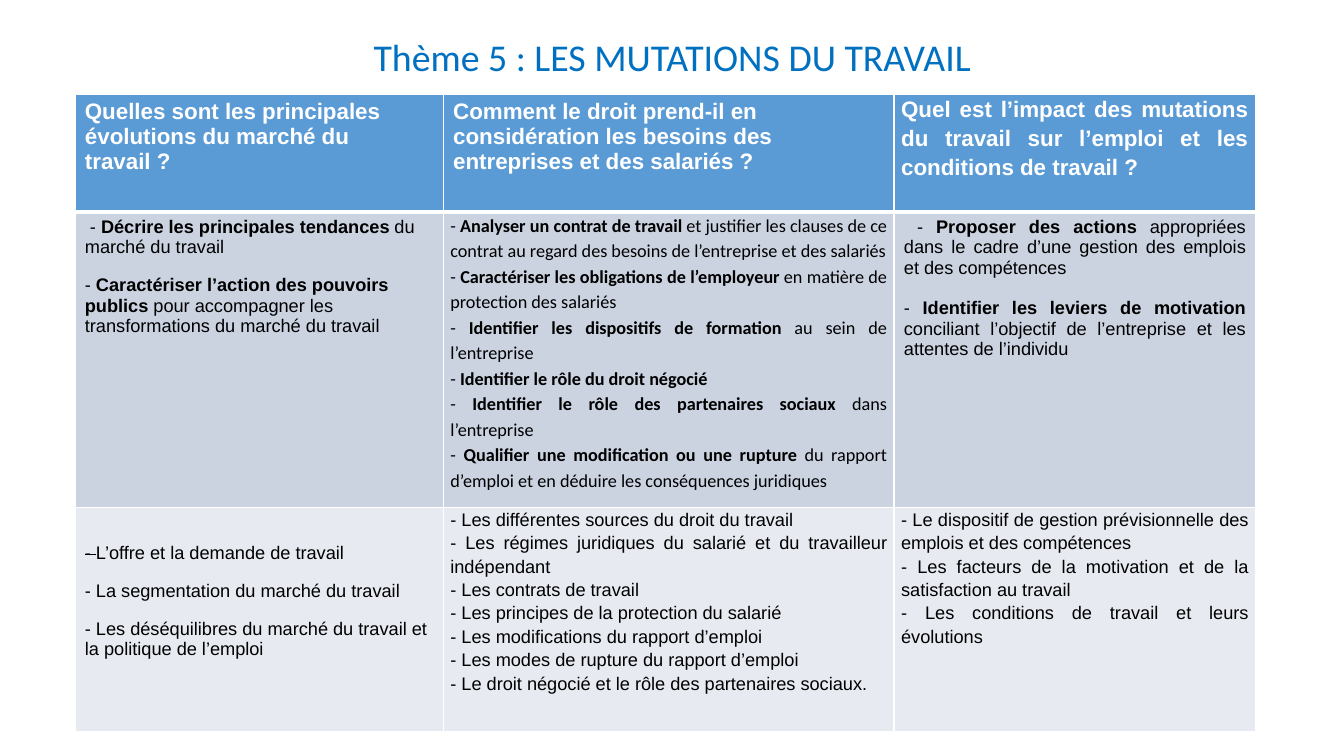
"""Build the slide on the changes in work: a title above a table of three questions."""
from dataclasses import dataclass
from typing import Any

from lxml import etree
from pptx import Presentation
from pptx.dml.color import RGBColor
from pptx.enum.text import MSO_ANCHOR, MSO_AUTO_SIZE, PP_ALIGN
from pptx.oxml.ns import qn
from pptx.util import Cm, Pt

LEFT, CENTER, JUSTIFY = PP_ALIGN.LEFT, PP_ALIGN.CENTER, PP_ALIGN.JUSTIFY
TOP, NO_FIT = MSO_ANCHOR.TOP, MSO_AUTO_SIZE.NONE

COLORS = {
    "title": "0070C0",
    "header": "5B9BD5",
    "skills": "CBD3E1",
    "notions": "E7EAF1",
    "white": "FFFFFF",
    "black": "000000",
}
COL_WIDTHS = (9.28, 11.36, 9.11)
ROW_HEIGHTS = (2.97, 7.44, 5.66)
LOOSE = {"margin_left": Cm(0.25), "margin_right": Cm(0.25),
         "margin_top": Cm(0.13), "margin_bottom": Cm(0.13)}
TIGHT = {"margin_left": Cm(0.18), "margin_right": Cm(0.18),
         "margin_top": 0, "margin_bottom": 0}
LOWERED = LOOSE | {"margin_top": Cm(0.91)}
PLAIN = {"alignment": LEFT, "line_spacing": 1.0}
SPACED = PLAIN | {"space_after": Pt(12.5)}
APART = {"alignment": JUSTIFY, "line_spacing": 1.0, "space_after": Pt(14.5)}
AIRY = {"alignment": JUSTIFY, "line_spacing": 1.15}


@dataclass
class Entry:
    """Content of one cell; text between asterisks takes the mark."""
    paras: list[str]
    margins: dict[str, Any]
    layout: dict[str, Any]
    font: str = "Arial"
    mark: str = "bold"


@dataclass
class Band:
    """One table row with its fill and text style."""
    fill: str
    color: str
    size: float
    bold: bool
    entries: list[Entry]


BANDS = [
    Band("header", "white", 16, True, [
        Entry(["Quelles sont les principales évolutions du marché du travail ?"], LOOSE, PLAIN),
        Entry(["Comment le droit prend-il en considération les besoins des "
               "entreprises et des salariés ?"], LOOSE, PLAIN),
        Entry(["Quel est l’impact des mutations du travail sur l’emploi et les "
               "conditions de travail ?"], TIGHT, AIRY),
    ]),
    Band("skills", "black", 13, False, [
        Entry([" -* Décrire les principales tendances *du marché du travail",
               "- *Caractériser l’action des pouvoirs publics *pour accompagner les "
               "transformations du marché du travail"], LOOSE, SPACED),
        Entry(["- *Analyser un contrat de travail *et justifier les clauses de ce contrat "
               "au regard des besoins de l’entreprise et des salariés",
               "- *Caractériser les obligations de l’employeur *en matière de "
               "protection des salariés",
               "- *Identifier les dispositifs de formation *au sein de l’entreprise",
               "- *Identifier le rôle du droit négocié*",
               "- *Identifier le rôle des partenaires sociaux* dans l’entreprise",
               "- *Qualifier une modification ou une rupture *du rapport d’emploi et en "
               "déduire les conséquences juridiques"], TIGHT, AIRY, font="Calibri"),
        Entry([" - *Proposer des actions *appropriées dans le cadre d’une gestion des "
               "emplois et des compétences",
               "- *Identifier les leviers de motivation *conciliant l’objectif de "
               "l’entreprise et les attentes de l’individu"], LOOSE, APART),
    ]),
    Band("notions", "black", 13, False, [
        Entry(["*- *L’offre et la demande de travail",
               "- La segmentation du marché du travail",
               "- Les déséquilibres du marché du travail et la politique de l’emploi"],
              LOWERED, SPACED, mark="strike"),
        Entry(["- Les différentes sources du droit du travail",
               "- Les régimes juridiques du salarié et du travailleur indépendant",
               "- Les contrats de travail",
               "- Les principes de la protection du salarié",
               "- Les modifications du rapport d’emploi",
               "- Les modes de rupture du rapport d’emploi",
               "- Le droit négocié et le rôle des partenaires sociaux."], TIGHT, AIRY),
        Entry(["- Le dispositif de gestion prévisionnelle des emplois et des compétences",
               "- Les facteurs de la motivation et de la satisfaction au travail",
               "- Les conditions de travail et leurs évolutions"], TIGHT, AIRY),
    ]),
]


def rgb(name: str) -> RGBColor:
    """Return the named colour."""
    return RGBColor.from_string(COLORS[name])


def apply(target: Any, values: dict[str, Any]) -> None:
    """Set each attribute of the target."""
    for name, value in values.items():
        setattr(target, name, value)


def add_run(p: Any, text: str, color: str, **font: Any) -> Any:
    """Add a formatted run to a paragraph."""
    r = p.add_run()
    r.text = text
    apply(r.font, font)
    r.font.color.rgb = rgb(color)
    return r


def draw_borders(cell: Any, row: int) -> None:
    """Give a cell white borders, thick below the header."""
    thick = {(0, "lnB"), (1, "lnT")}
    for side in ("lnL", "lnR", "lnT", "lnB"):
        width = Pt(3 if (row, side) in thick else 1)
        ln = etree.SubElement(cell._tc.get_or_add_tcPr(), qn(f"a:{side}"), w=str(width))
        fill = etree.SubElement(ln, qn("a:solidFill"))
        etree.SubElement(fill, qn("a:srgbClr"), val=COLORS["white"])


def fill_cell(cell: Any, band: Band, entry: Entry) -> None:
    """Fill a cell and write its paragraphs."""
    cell.fill.solid()
    cell.fill.fore_color.rgb = rgb(band.fill)
    apply(cell, entry.margins)
    tf = cell.text_frame
    for i, para in enumerate(entry.paras):
        p = tf.add_paragraph() if i else tf.paragraphs[0]
        apply(p, entry.layout)
        for j, part in enumerate(para.split("*")):
            if not part:
                continue
            marked = j % 2 == 1
            bold = band.bold or (marked and entry.mark == "bold")
            r = add_run(p, part, band.color, name=entry.font, size=Pt(band.size), bold=bold)
            if marked and entry.mark == "strike":
                r._r.get_or_add_rPr().set("strike", "sngStrike")


def add_title(s: Any) -> None:
    """Place and write the title."""
    sp = s.shapes.title
    apply(sp, {"left": Cm(5.51), "top": Cm(0.76), "width": Cm(22.86), "height": Cm(3.18)})
    tf = sp.text_frame
    apply(tf, {"auto_size": NO_FIT, "word_wrap": True, "vertical_anchor": TOP,
               "margin_top": Cm(0.22)})
    p = tf.paragraphs[0]
    apply(p, {"alignment": CENTER, "line_spacing": 0.9})
    add_run(p, "Thème 5 : LES MUTATIONS DU TRAVAIL", "title", name="Calibri", size=Pt(27))


def add_questions(s: Any) -> None:
    """Draw the table of questions, skills and notions."""
    table = s.shapes.add_table(len(ROW_HEIGHTS), len(COL_WIDTHS), Cm(1.89), Cm(2.37),
                               Cm(sum(COL_WIDTHS)), Cm(sum(ROW_HEIGHTS))).table
    for column, width in zip(table.columns, COL_WIDTHS):
        column.width = Cm(width)
    for row, height in zip(table.rows, ROW_HEIGHTS):
        row.height = Cm(height)
    for i, band in enumerate(BANDS):
        for j, entry in enumerate(band.entries):
            cell = table.cell(i, j)
            draw_borders(cell, i)
            fill_cell(cell, band, entry)


def main() -> None:
    """Build and save the presentation."""
    prs = Presentation()
    apply(prs, {"slide_width": Cm(33.87), "slide_height": Cm(19.05)})
    s = prs.slides.add_slide(prs.slide_layouts[5])
    add_title(s)
    add_questions(s)
    prs.save("out.pptx")


if __name__ == "__main__":
    main()
